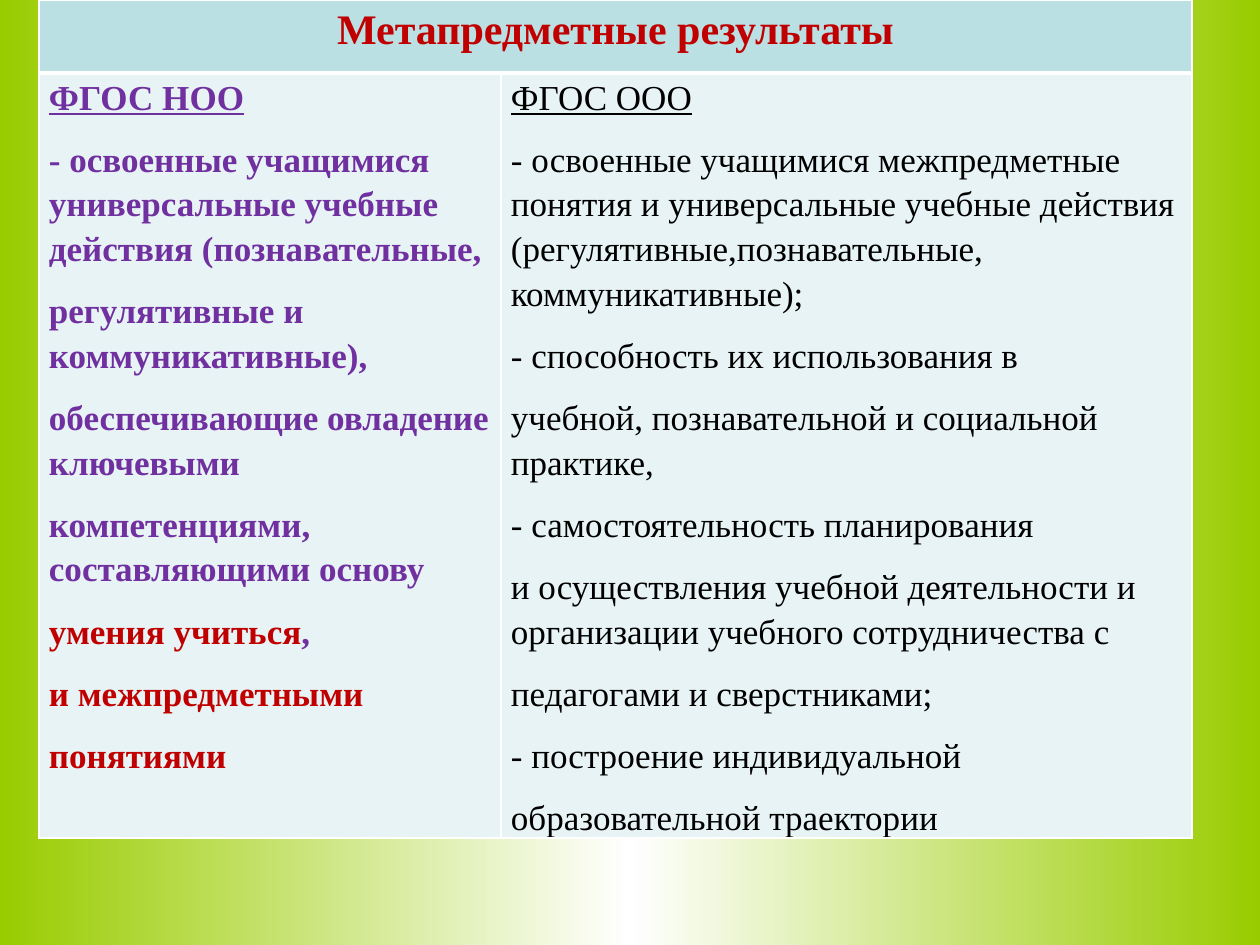
from lxml import etree
from pptx import Presentation, util as u
from pptx.dml.color import RGBColor
from pptx.enum import text
from pptx.oxml import parse_xml
from pptx.oxml.ns import nsdecls

# Content: each paragraph is a list of (text, colour) runs
TITLE = [[("Метапредметные результаты", "red")]]
PRIMARY = [
    [("ФГОС НОО", "purple")],
    [("- освоенные учащимися универсальные учебные действия (познавательные,", "purple")],
    [("регулятивные и коммуникативные),", "purple")],
    [("обеспечивающие овладение ключевыми", "purple")],
    [("компетенциями, составляющими основу", "purple")],
    [("умения учиться", "red"), (",", "purple")],
    [("и межпредметными", "red")],
    [("понятиями", "red")],
]
BASIC = [[(line, "black")] for line in (
    "ФГОС ООО",
    "- освоенные учащимися межпредметные понятия и универсальные учебные действия "
    "(регулятивные,познавательные, коммуникативные);",
    "- способность их использования в",
    "учебной, познавательной и социальной практике,",
    "- самостоятельность планирования",
    "и осуществления учебной деятельности и организации учебного сотрудничества с",
    "педагогами и сверстниками;",
    "- построение индивидуальной",
    "образовательной траектории",
)]
COLORS = {"red": "C00000", "purple": "7030A0", "black": "000000", "white": "FFFFFF",
          "header": "BBE0E3", "body": "E7F3F4", "green": "99CC00"}
BACKGROUND = [(0, "green"), (50, "white"), (100, "green")]
FONT = "Times New Roman"
LEFT, TOP = 39, 0
COLUMNS, ROWS = (462, 691), (73, 695)


def px(n):
    return u.Emu(round(n * 914400 / 126))


def rgb(name):
    return RGBColor.from_string(COLORS[name])


def set_borders(cell, bottom=1):
    props = cell._tc.get_or_add_tcPr()
    for i, (side, width) in enumerate((("L", 1), ("R", 1), ("T", 1), ("B", bottom))):
        props.insert(i, parse_xml(
            f'<a:ln{side} {nsdecls("a")} w="{u.Pt(width)}"><a:solidFill>'
            f'<a:srgbClr val="{COLORS["white"]}"/></a:solidFill></a:ln{side}>'))


def fill_cell(cell, paragraphs, fill, size, bold=True, align=text.PP_ALIGN.LEFT,
              underline_first=False):
    cell.fill.solid()
    cell.fill.fore_color.rgb = rgb(fill)
    cell.margin_left = cell.margin_right = px(10)
    cell.margin_top = cell.margin_bottom = 0
    frame = cell.text_frame
    for i, runs in enumerate(paragraphs):
        paragraph = frame.add_paragraph() if i else frame.paragraphs[0]
        paragraph.alignment = align
        paragraph.line_spacing = 1.15
        paragraph.space_after = u.Pt(10)
        for wording, color in runs:
            run = paragraph.add_run()
            run.text = wording
            run.font.name, run.font.size = FONT, u.Pt(size)
            run.font.bold = bold
            run.font.underline = underline_first and i == 0
            run.font.color.rgb = rgb(color)


prs = Presentation()
prs.slide_width, prs.slide_height = px(1260), px(945)
slide = prs.slides.add_slide(prs.slide_layouts[6])

# Background: green at both sides, white in the middle
background = slide.background.fill
background.gradient()
background.gradient_angle = 0
stops = background.gradient_stops[0]._gs.getparent()
for stop in list(stops):
    stops.remove(stop)
for position, color in BACKGROUND:
    stop = etree.SubElement(stops, stops.tag.replace("gsLst", "gs"), pos=str(position * 1000))
    etree.SubElement(stop, stops.tag.replace("gsLst", "srgbClr"), val=COLORS[color])

# Comparison table
table = slide.shapes.add_table(len(ROWS), len(COLUMNS), px(LEFT), px(TOP),
                               px(sum(COLUMNS)), px(sum(ROWS))).table
for column, width in zip(table.columns, COLUMNS):
    column.width = px(width)
for row, height in zip(table.rows, ROWS):
    row.height = px(height)

header = table.cell(0, 0)
header.merge(table.cell(0, 1))
fill_cell(header, TITLE, "header", 24, align=text.PP_ALIGN.CENTER)
fill_cell(table.cell(1, 0), PRIMARY, "body", 20, underline_first=True)
fill_cell(table.cell(1, 1), BASIC, "body", 20, bold=False, underline_first=True)
for column in range(len(COLUMNS)):
    set_borders(table.cell(0, column), bottom=3)
    set_borders(table.cell(1, column))

prs.save("out.pptx")
